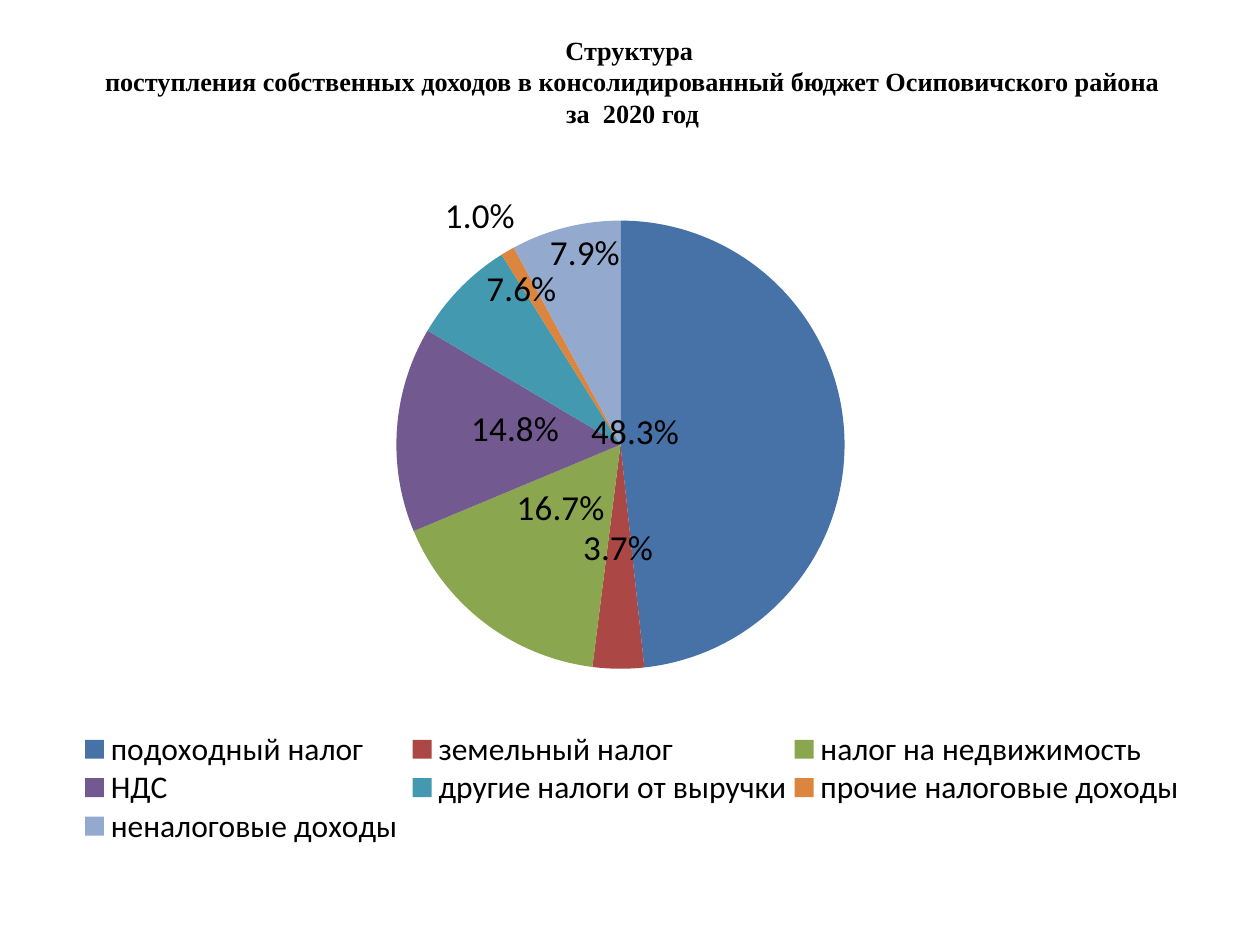
from dataclasses import dataclass

from lxml.etree import SubElement
from pptx import Presentation
from pptx.chart.data import CategoryChartData
from pptx.dml.color import RGBColor
from pptx.enum.chart import XL_CHART_TYPE as ChartType
from pptx.enum.chart import XL_LABEL_POSITION as LabelPos
from pptx.enum.chart import XL_LEGEND_POSITION as LegendPos
from pptx.enum.text import MSO_ANCHOR as Anchor
from pptx.enum.text import PP_ALIGN as Align
from pptx.oxml import parse_xml
from pptx.oxml.ns import nsdecls, qn
from pptx.util import Inches, Pt


@dataclass(frozen=True)
class Theme:
    ink: str = "000000"
    title_font: str = "Times New Roman"
    chart_font: str = "Calibri"
    title_size: int = 15
    legend_size: int = 18
    label_size: int = 20
    percent: str = "0.0%"


@dataclass(frozen=True)
class Income:
    name: str
    share: float
    color: str
    label_shift: tuple[float, float]


THEME = Theme()
INCOMES = [
    Income("подоходный налог", 0.483, "4672A8", (-0.23, 0)),
    Income("земельный налог ", 0.037, "AB4744", (0, -0.22)),
    Income("налог на недвижимость", 0.167, "8AA64F", (0.11, -0.21)),
    Income("НДС", 0.148, "725990", (0.15, 0)),
    Income("другие налоги от выручки", 0.076, "4299B0", (0.09, 0.04)),
    Income("прочие налоговые доходы", 0.01, "DC853E", (0.01, -0.01)),
    Income("неналоговые доходы ", 0.079, "93A9CE", (0.05, 0.08)),
]


def style_font(font, *, name: str, size: int, color: str, bold: bool = False) -> None:
    """Apply one format to a text or chart font."""
    font.name, font.size, font.bold = name, Pt(size), bold
    font.color.rgb = RGBColor.from_string(color)


def add_text(slide, text: str, box: tuple, *, align=Align.CENTER, anchor=Anchor.MIDDLE, **fmt):
    """Add a wrapped text box holding one formatted paragraph."""
    sp = slide.shapes.add_textbox(*map(Inches, box))
    tf = sp.text_frame
    tf.word_wrap, tf.vertical_anchor = True, anchor
    tf.margin_bottom = Inches(0.12)
    p = tf.paragraphs[0]
    p.text, p.alignment = text, align
    for r in p.runs:
        style_font(r.font, **fmt)
    return sp


def make_layout(**settings):
    """Build a manual chart layout from its settings."""
    layout = parse_xml(f"<c:layout {nsdecls('c')}/>")
    manual = SubElement(layout, qn("c:manualLayout"))
    for key, value in settings.items():
        SubElement(manual, qn(f"c:{key}")).set("val", str(value))
    return layout


def place_part(part, index: int, **settings) -> None:
    """Replace the layout of a chart part with a manual one from the edge."""
    for old in part.findall(qn("c:layout")):
        part.remove(old)
    part.insert(index, make_layout(**settings))


def style_slice(series, index: int, income: Income) -> None:
    """Colour a slice and shift its label from the outside end."""
    point = series.points[index]
    point.format.fill.solid()
    point.format.fill.fore_color.rgb = RGBColor.from_string(income.color)
    label = point.data_label
    style_font(label.font, name=THEME.chart_font, size=THEME.label_size, color=THEME.ink)
    label.position = LabelPos.OUTSIDE_END
    node = series.data_labels._element.findall(qn("c:dLbl"))[index]
    x, y = income.label_shift
    node.insert(1, make_layout(x=x, y=y))
    node.insert(2, parse_xml(
        f'<c:numFmt {nsdecls("c")} formatCode="{THEME.percent}" sourceLinked="0"/>'))


def add_income_pie(slide, incomes: list[Income], box: tuple) -> None:
    """Add the pie of income shares with its legend."""
    data = CategoryChartData(number_format=THEME.percent)
    data.categories = [i.name for i in incomes]
    data.add_series("Series 1", [i.share for i in incomes])
    chart = slide.shapes.add_chart(ChartType.PIE, *map(Inches, box), data).chart
    chart.has_title = False
    style_font(chart.font, name=THEME.chart_font, size=THEME.legend_size, color=THEME.ink)
    chart.has_legend = True
    chart.legend.position = LegendPos.BOTTOM
    chart.legend.include_in_layout = False

    plot = chart.plots[0]
    plot.vary_by_categories = True
    series = plot.series[0]
    labels = series.data_labels
    labels.show_value = True
    labels.number_format, labels.number_format_is_linked = THEME.percent, False
    labels.position = LabelPos.OUTSIDE_END
    style_font(labels.font, name=THEME.chart_font, size=THEME.label_size, color=THEME.ink)
    for index, income in enumerate(incomes):
        style_slice(series, index, income)

    area = chart._chartSpace.find(f".//{qn('c:plotArea')}")
    place_part(area, 0, layoutTarget="inner", xMode="edge", yMode="edge",
               x=0.07, y=0.08, w=0.84, h=0.66)
    place_part(chart.legend._element, 1, xMode="edge", yMode="edge",
               x=0.01, y=0.83, w=0.98, h=0.17)


def main() -> None:
    """Build the income structure slide."""
    prs = Presentation()
    prs.slide_width, prs.slide_height = Inches(10), Inches(7.5)
    s = prs.slides.add_slide(prs.slide_layouts[6])
    title = ("Структура\v поступления собственных доходов в консолидированный бюджет "
             "Осиповичского района\v за  2020 год")
    add_text(s, title, (0.23, 0.21, 9.53, 0.94), name=THEME.title_font,
             size=THEME.title_size, color=THEME.ink, bold=True)
    add_income_pie(s, INCOMES, (0.52, 1.32, 8.99, 5.39))
    prs.save("out.pptx")


if __name__ == "__main__":
    main()
